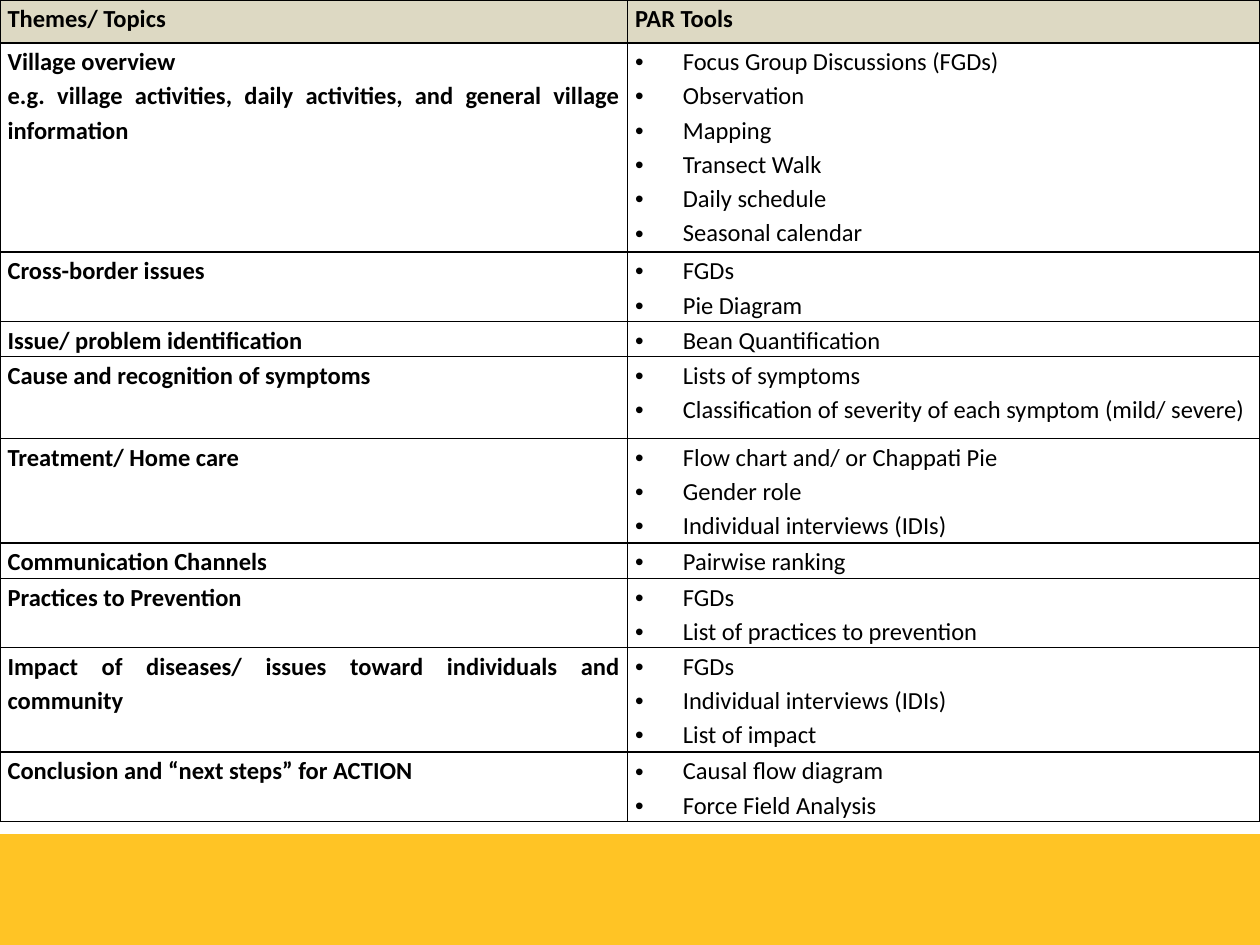
from dataclasses import dataclass

from lxml.etree import SubElement as Sub
from pptx import Presentation
from pptx.dml.color import RGBColor as RGB
from pptx.enum.shapes import MSO_SHAPE as Shape
from pptx.enum.text import PP_ALIGN as Align
from pptx.oxml.ns import qn
from pptx.util import Inches, Pt


@dataclass(frozen=True)
class Theme:
    """Colours and type of the slide."""
    ink: str = "000000"
    head: str = "DDD9C3"
    band: str = "FFC425"
    font: str = "Calibri"
    size: int = 14
    lead: float = 1.15
    rule: int = 1


THEME = Theme()
HEADS = ("Themes/ Topics", "PAR Tools")
TOPICS = [
    (1.66, ["Village overview",
            "e.g. village activities, daily activities, and general village information"],
     ["Focus Group Discussions (FGDs)", "Observation", "Mapping",
      "Transect Walk", "Daily schedule", "Seasonal calendar"]),
    (0.55, ["Cross-border issues"], ["FGDs", "Pie Diagram"]),
    (0.28, ["Issue/ problem identification"], ["Bean Quantification"]),
    (0.65, ["Cause and recognition of symptoms"],
     ["Lists of symptoms",
      "Classification of severity of each symptom (mild/ severe)"]),
    (0.83, ["Treatment/ Home care"],
     ["Flow chart and/ or Chappati Pie", "Gender role",
      "Individual interviews (IDIs)"]),
    (0.28, ["Communication Channels"], ["Pairwise ranking"]),
    (0.55, ["Practices to Prevention"],
     ["FGDs", "List of practices to prevention"]),
    (0.83, ["Impact of diseases/ issues toward individuals and community"],
     ["FGDs", "Individual interviews (IDIs)", "List of impact"]),
    (0.55, ["Conclusion and “next steps” for ACTION"],
     ["Causal flow diagram", "Force Field Analysis"]),
]


def add_rules(cell):
    """Draw a line on all four sides of a cell."""
    props = cell._tc.get_or_add_tcPr()
    for side in ("lnL", "lnR", "lnT", "lnB"):
        line = Sub(props, qn(f"a:{side}"), w=str(Pt(THEME.rule)))
        fill = Sub(line, qn("a:solidFill"))
        Sub(fill, qn("a:srgbClr"), val=THEME.ink)


def add_bullet(para):
    """Give a paragraph a hanging bullet."""
    props = para._p.get_or_add_pPr()
    props.set("marL", str(Inches(0.38)))
    props.set("indent", str(-Inches(0.38)))
    Sub(props, qn("a:buFont"), typeface="Arial")
    Sub(props, qn("a:buChar"), char="•")


def fill_cell(cell, lines, bold=True, bullet=False, fill=None):
    """Write and format the lines of one cell."""
    cell.margin_left = cell.margin_right = Inches(0.06)
    cell.margin_top = cell.margin_bottom = 0
    add_rules(cell)
    if fill:
        cell.fill.solid()
        cell.fill.fore_color.rgb = RGB.from_string(fill)
    else:
        cell.fill.background()
    cell.text = "\n".join(lines)
    for para in cell.text_frame.paragraphs:
        if bullet:
            add_bullet(para)
        para.alignment = Align.JUSTIFY
        para.line_spacing = THEME.lead
        font = para.font
        font.name, font.size, font.bold = THEME.font, Pt(THEME.size), bold
        font.color.rgb = RGB.from_string(THEME.ink)


def add_topics(slide, left, top, width, height):
    """Place the table of themes and tools in a box."""
    frame = slide.shapes.add_table(len(TOPICS) + 1, 2, left, top, width, height)
    table = frame.table
    first = Inches(4.98)
    table.columns[0].width = first
    table.columns[1].width = width - first
    table.rows[0].height = Inches(0.34)
    for col, head in enumerate(HEADS):
        fill_cell(table.cell(0, col), [head], fill=THEME.head)
    for row, (tall, themes, tools) in enumerate(TOPICS, 1):
        table.rows[row].height = Inches(tall)
        fill_cell(table.cell(row, 0), themes)
        fill_cell(table.cell(row, 1), tools, bold=False, bullet=True)


def add_band(slide, left, top, width, height):
    """Place the plain colour band in a box."""
    band = slide.shapes.add_shape(Shape.RECTANGLE, left, top, width, height)
    band.shadow.inherit = False
    band.fill.solid()
    band.fill.fore_color.rgb = RGB.from_string(THEME.band)
    band.line.fill.background()


def main():
    """Build and save the slide."""
    deck = Presentation()
    deck.slide_width, deck.slide_height = Inches(10), Inches(7.5)
    slide = deck.slides.add_slide(deck.slide_layouts[6])
    add_band(slide, 0, Inches(6.62), Inches(10), Inches(0.88))
    add_topics(slide, 0, 0, Inches(10), Inches(6.52))
    deck.save("out.pptx")


if __name__ == "__main__":
    main()
